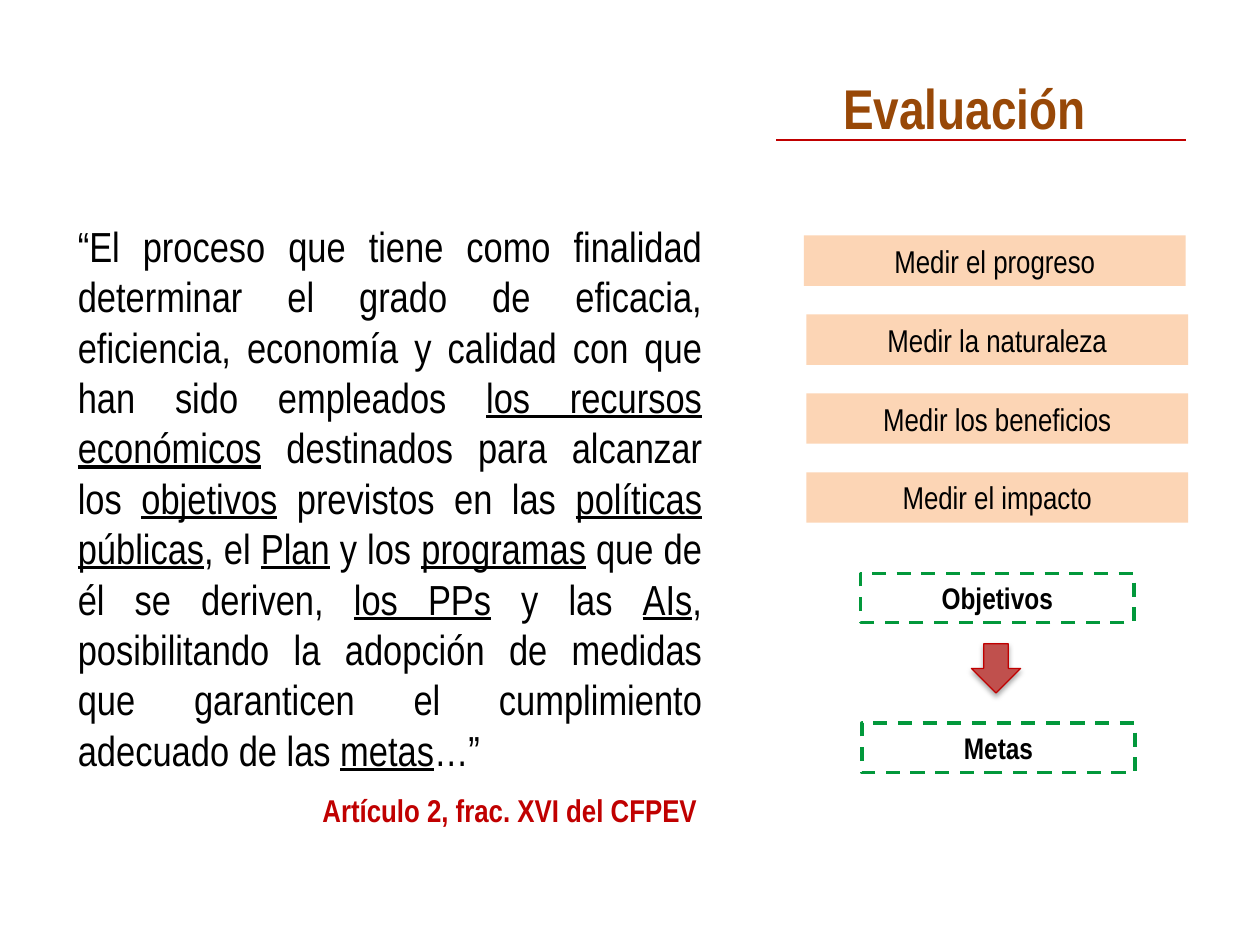
import lxml.etree
import pptx
import pptx.dml.color
import pptx.enum.dml
import pptx.enum.shapes
import pptx.enum.text
import pptx.oxml
import pptx.oxml.ns
import pptx.util

Pt = pptx.util.Pt
Align = pptx.enum.text.PP_ALIGN
Shape = pptx.enum.shapes.MSO_SHAPE

# Content: plain and underlined passages of the definition alternate
TITLE = "Evaluación"
DEFINITION = [
    "“El proceso que tiene como finalidad determinar el grado de eficacia, "
    "eficiencia, economía y calidad con que han sido empleados ",
    "los recursos económicos", " destinados para alcanzar los ",
    "objetivos", " previstos en las ",
    "políticas públicas", ", el ",
    "Plan", " y los ",
    "programas", " que de él se deriven, ",
    "los PPs", " y las ",
    "AIs", ", posibilitando la adopción de medidas que garanticen el "
    "cumplimiento adecuado de las ",
    "metas", "…”",
]
CITATION = "Artículo 2, frac. XVI del CFPEV"
MEASURES = [  # text, left
    ("Medir el progreso", 459.4),
    ("Medir la naturaleza", 460.8),
    ("Medir los beneficios", 460.8),
    ("Medir el impacto", 460.8),
]
OUTCOMES = [("Objetivos", 491.8, 327.6), ("Metas", 492.5, 413.3)]  # text, left, top

THEME = {
    "font": "Arial Narrow",
    "black": "000000", "white": "FFFFFF", "brown": "984807", "red": "C00000",
    "peach": "FCD5B5", "green": "02983B", "brick": "C0504D",
    "title": 32, "body": 24, "label": 18, "outcome": 17,
}
MEASURE_TOP, MEASURE_PITCH = 134.6, 45.1
MEASURE_SIZE = (218.2, 28.8)
OUTCOME_SIZE = (156.2, 28.1)


def color(name):
    return pptx.dml.color.RGBColor.from_string(THEME[name])


def write(shape, passages, size, alignment, ink="black", bold=False):
    """Fill a shape with one paragraph, underlining every second passage."""
    frame_format = {
        "word_wrap": True,
        "auto_size": pptx.enum.text.MSO_AUTO_SIZE.SHAPE_TO_FIT_TEXT,
        "vertical_anchor": pptx.enum.text.MSO_ANCHOR.TOP,
    }
    for name, value in frame_format.items():
        setattr(shape.text_frame, name, value)
    paragraph = shape.text_frame.paragraphs[0]
    paragraph.alignment = alignment
    for index, passage in enumerate(passages):
        run = paragraph.add_run()
        run.text = passage
        font_format = {"name": THEME["font"], "size": Pt(THEME[size]),
                       "bold": bold, "underline": index % 2 == 1}
        for name, value in font_format.items():
            setattr(run.font, name, value)
        run.font.color.rgb = color(ink)


def add_text(slide, box, *text_format):
    write(slide.shapes.add_textbox(*map(Pt, box)), *text_format)


def add_block(slide, kind, box, fill, line=None, width=0, dash=None):
    shape = slide.shapes.add_shape(kind, *map(Pt, box))
    shape.shadow.inherit = False
    shape.fill.solid()
    shape.fill.fore_color.rgb = color(fill)
    if line:
        shape.line.color.rgb = color(line)
        shape.line.width = Pt(width)
        shape.line.dash_style = dash
    else:
        shape.line.fill.background()
    return shape


def add_shadow(shape):
    effects = shape.element.spPr.find(pptx.oxml.ns.qn("a:effectLst"))
    effects.append(pptx.oxml.parse_xml(
        f'<a:outerShdw {pptx.oxml.ns.nsdecls("a")} blurRad="{Pt(3.1)}" '
        f'dist="{Pt(1.8)}" dir="5400000" rotWithShape="0">'
        f'<a:srgbClr val="{THEME["black"]}"><a:alpha val="35000"/></a:srgbClr>'
        '</a:outerShdw>'))


def add_rule(slide, left, right, top):
    rule = slide.shapes.add_connector(
        pptx.enum.shapes.MSO_CONNECTOR.STRAIGHT, Pt(left), Pt(top), Pt(right), Pt(top))
    rule.line.color.rgb = color("red")
    rule.line.width = Pt(1.25)
    lxml.etree.SubElement(rule.element.spPr, pptx.oxml.ns.qn("a:effectLst"))


def main():
    presentation = pptx.Presentation()
    presentation.slide_width, presentation.slide_height = Pt(720), Pt(540)
    slide = presentation.slides.add_slide(presentation.slide_layouts[6])

    # Title, definition, rule under the title and citation
    add_text(slide, (443.5, 38.2, 215.3, 46.1), [TITLE], "title", Align.CENTER, "brown", True)
    add_text(slide, (37.4, 122.4, 370.8, 326.9), DEFINITION, "body", Align.JUSTIFY)
    add_rule(slide, 443.5, 677.5, 79.9)
    add_text(slide, (99.4, 448.6, 306, 28.8), [CITATION], "label", Align.RIGHT, "red", True)

    # Measures, stacked at an equal pitch
    for index, (text, left) in enumerate(MEASURES):
        top = MEASURE_TOP + index * MEASURE_PITCH
        block = add_block(slide, Shape.RECTANGLE, (left, top, *MEASURE_SIZE), "peach")
        write(block, [text], "label", Align.CENTER)

    # Objectives leading to goals
    for text, left, top in OUTCOMES:
        block = add_block(slide, Shape.RECTANGLE, (left, top, *OUTCOME_SIZE), "white",
                          "green", 2, pptx.enum.dml.MSO_LINE.DASH)
        write(block, [text], "outcome", Align.CENTER, "black", True)
    arrow = add_block(slide, Shape.DOWN_ARROW, (555.1, 367.9, 28.1, 28.1), "brick", "red", 0.75)
    add_shadow(arrow)

    presentation.save("out.pptx")


if __name__ == "__main__":
    main()
